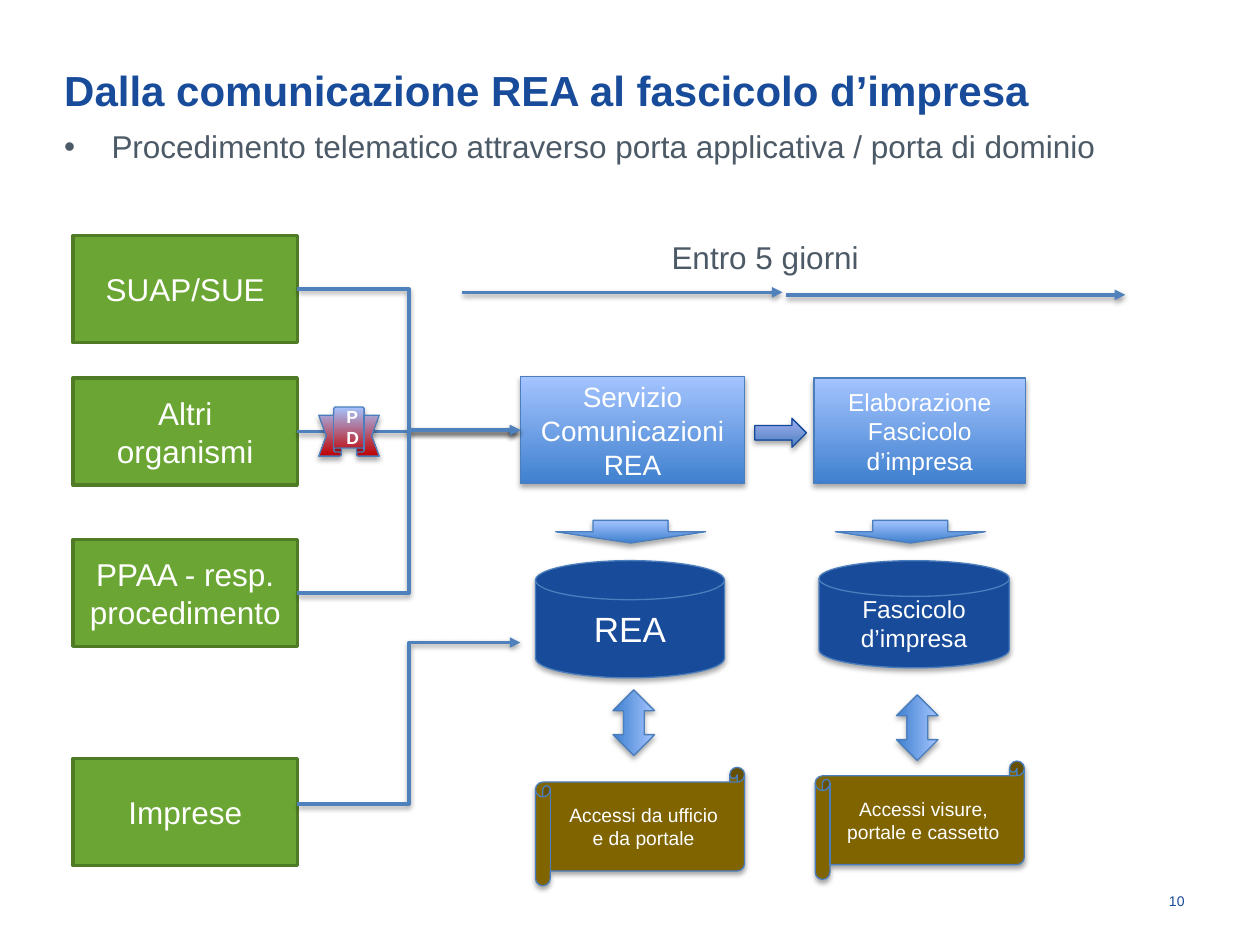
import pptx
import pptx.dml.color
import pptx.enum.shapes
import pptx.enum.text
import pptx.oxml.ns
import pptx.util
from lxml import etree

Inches = pptx.util.Inches
Pt = pptx.util.Pt
SHAPE = pptx.enum.shapes.MSO_SHAPE
CONNECTOR = pptx.enum.shapes.MSO_CONNECTOR
ANCHOR = pptx.enum.text.MSO_ANCHOR
ALIGN = pptx.enum.text.PP_ALIGN
qn = pptx.oxml.ns.qn

COLORS = {
    "navy": "184B9A", "slate": "4C5966", "white": "FFFFFF", "black": "000000",
    "green": "6BA634", "dark_green": "4F7B26", "outline": "4B7EBC",
    "blue": "3F80CE", "light_blue": "A4C4FF", "arrow": "4F81BD",
    "lilac": "A0AFF2", "dark_blue": "14499A", "red": "C00000", "brown": "806400",
}
BLUE_GRADIENT = ("blue", "light_blue")

TITLE = "Dalla comunicazione REA al fascicolo d’impresa"
SUBTITLE = "Procedimento telematico attraverso porta applicativa / porta di dominio"
SENDER_LEFT, SENDER_WIDTH, SENDER_HEIGHT = 0.58, 1.78, 0.85
SENDERS = [("SUAP/SUE", 1.87), ("Altri organismi", 3), ("PPAA - resp. procedimento", 4.28), ("Imprese", 6.02)]
SERVICE = "Servizio\nComunicazioni REA"
FLOW_SHAPES = [
    (SHAPE.RECTANGLE, (4.13, 2.99, 1.78, 0.85), BLUE_GRADIENT, SERVICE, 16),
    (SHAPE.RECTANGLE, (6.46, 3, 1.68, 0.84), BLUE_GRADIENT, "Elaborazione Fascicolo d’impresa", 14),
    (SHAPE.FLOWCHART_MAGNETIC_DISK, (4.25, 4.45, 1.5, 0.93), ("navy",), "REA", 20),
    (SHAPE.FLOWCHART_MAGNETIC_DISK, (6.5, 4.45, 1.51, 0.85), ("navy",), "Fascicolo d’impresa", 14),
    (SHAPE.HORIZONTAL_SCROLL, (4.25, 6.09, 1.66, 0.94), ("brown",), "Accessi da ufficio e da portale", 11),
    (SHAPE.HORIZONTAL_SCROLL, (6.47, 6.04, 1.66, 0.94), ("brown",), "Accessi visure, portale e cassetto", 11),
]
DOWN_ARROWS = [(4.41, 4.13), (6.63, 4.13)]
DOUBLE_ARROWS = [(4.77, 5.57), (7.02, 5.61)]
TIME_ARROWS = [(3.67, 6.21, 2.32), (6.24, 8.93, 2.34)]


def rgb(name):
    return pptx.dml.color.RGBColor.from_string(COLORS[name])


def write_text(shape, text, size, color="white", bold=False, align=ALIGN.CENTER,
               anchor=ANCHOR.MIDDLE, inset=None):
    frame = shape.text_frame
    frame.word_wrap = True
    frame.auto_size = pptx.enum.text.MSO_AUTO_SIZE.NONE
    frame.vertical_anchor = anchor
    if inset is not None:
        frame.margin_left = frame.margin_right = Inches(inset)
        frame.margin_top = frame.margin_bottom = Inches(inset)
    frame.text = text
    for paragraph in frame.paragraphs:
        paragraph.alignment = align
        paragraph.space_before = Pt(0)
        font = paragraph.font
        font.name, font.size, font.bold = "Arial", Pt(size), bold
        font.color.rgb = rgb(color)


def add_shadow(shape, opacity, distance):
    properties = shape.element.spPr
    effects = properties.find(qn("a:effectLst"))
    if effects is None:
        effects = etree.SubElement(properties, qn("a:effectLst"))
    shadow = etree.SubElement(effects, qn("a:outerShdw"), blurRad=str(Pt(3.1)),
                              dist=str(Pt(distance)), dir="5400000", rotWithShape="0")
    color = etree.SubElement(shadow, qn("a:srgbClr"), val=COLORS["black"])
    etree.SubElement(color, qn("a:alpha"), val=str(opacity * 1000))


def add_block(slide, kind, box, fill, text="", size=18, line="outline",
              line_width=0.75, shadow=True, bold=False):
    shape = slide.shapes.add_shape(kind, *map(Inches, box))
    if len(fill) == 1:
        shape.fill.solid()
        shape.fill.fore_color.rgb = rgb(fill[0])
    else:
        shape.fill.gradient()
        shape.fill.gradient_angle = 90
        for stop, color in zip(shape.fill.gradient_stops, fill):
            stop.color.rgb = rgb(color)
    shape.line.color.rgb = rgb(line)
    shape.line.width = Pt(line_width)
    shape.shadow.inherit = False
    if shadow:
        add_shadow(shape, 35, 1.8)
    if text:
        write_text(shape, text, size, bold=bold)
    return shape


def add_arrow(slide, kind, start, end):
    connector = slide.shapes.add_connector(kind, *map(Inches, start + end))
    connector.line.color.rgb = rgb("arrow")
    connector.line.width = Pt(2)
    etree.SubElement(connector.element.spPr.find(qn("a:ln")), qn("a:tailEnd"), type="triangle")
    add_shadow(connector, 38, 1.6)
    return connector


def place(shape, left, top, width, height):
    shape.left, shape.top = Inches(left), Inches(top)
    shape.width, shape.height = Inches(width), Inches(height)


def main():
    presentation = pptx.Presentation()
    presentation.slide_width, presentation.slide_height = Inches(10), Inches(7.5)
    slide = presentation.slides.add_slide(presentation.slide_layouts[1])

    title, subtitle = slide.placeholders
    plain = {"align": ALIGN.LEFT, "anchor": ANCHOR.TOP, "inset": 0}
    place(title, 0.51, 0.51, 8.99, 0.81)
    write_text(title, TITLE, 24, color="navy", bold=True, **plain)
    place(subtitle, 0.51, 1.01, 8.99, 0.3)
    subtitle.text_frame.text = SUBTITLE
    properties = subtitle.text_frame.paragraphs[0]._p.get_or_add_pPr()
    properties.set("marL", "0")
    properties.set("indent", "0")
    etree.SubElement(properties, qn("a:buNone"))
    write_text(subtitle, SUBTITLE, 18, color="slate", **plain)

    senders = [
        add_block(slide, SHAPE.RECTANGLE, (SENDER_LEFT, top, SENDER_WIDTH, SENDER_HEIGHT),
                  ("green",), text, line="dark_green", line_width=2, shadow=False)
        for text, top in SENDERS
    ]
    flow = [add_block(slide, *item) for item in FLOW_SHAPES]
    service = flow[0]

    for sender in senders[:3]:
        connector = add_arrow(slide, CONNECTOR.ELBOW, (2.36, 3.42), (4.13, 3.42))
        connector.begin_connect(sender, 3)
        connector.end_connect(service, 1)
    add_arrow(slide, CONNECTOR.ELBOW, (2.36, 6.38), (4.13, 5.1))
    for start, end, top in TIME_ARROWS:
        add_arrow(slide, CONNECTOR.STRAIGHT, (start, top), (end, top))

    add_block(slide, SHAPE.UP_RIBBON, (2.53, 3.23, 0.48, 0.39), ("red", "light_blue"),
              "PD", 10, bold=True)
    add_block(slide, SHAPE.RIGHT_ARROW, (5.99, 3.32, 0.41, 0.23), ("arrow", "lilac"),
              line="dark_blue")
    for left, top in DOWN_ARROWS:
        add_block(slide, SHAPE.DOWN_ARROW, (left, top, 1.19, 0.18), BLUE_GRADIENT)
    for left, top in DOUBLE_ARROWS:
        arrow = add_block(slide, SHAPE.LEFT_RIGHT_ARROW, (left, top, 0.52, 0.33), BLUE_GRADIENT)
        arrow.rotation = 90

    deadline = slide.shapes.add_textbox(*map(Inches, (5.33, 1.89, 2.14, 0.3)))
    write_text(deadline, "Entro 5 giorni", 18, color="slate", **plain)
    number = slide.shapes.add_textbox(*map(Inches, (8.78, 6.95, 0.72, 0.4)))
    write_text(number, "10", 8, color="navy", align=ALIGN.RIGHT)

    presentation.save("out.pptx")


if __name__ == "__main__":
    main()
